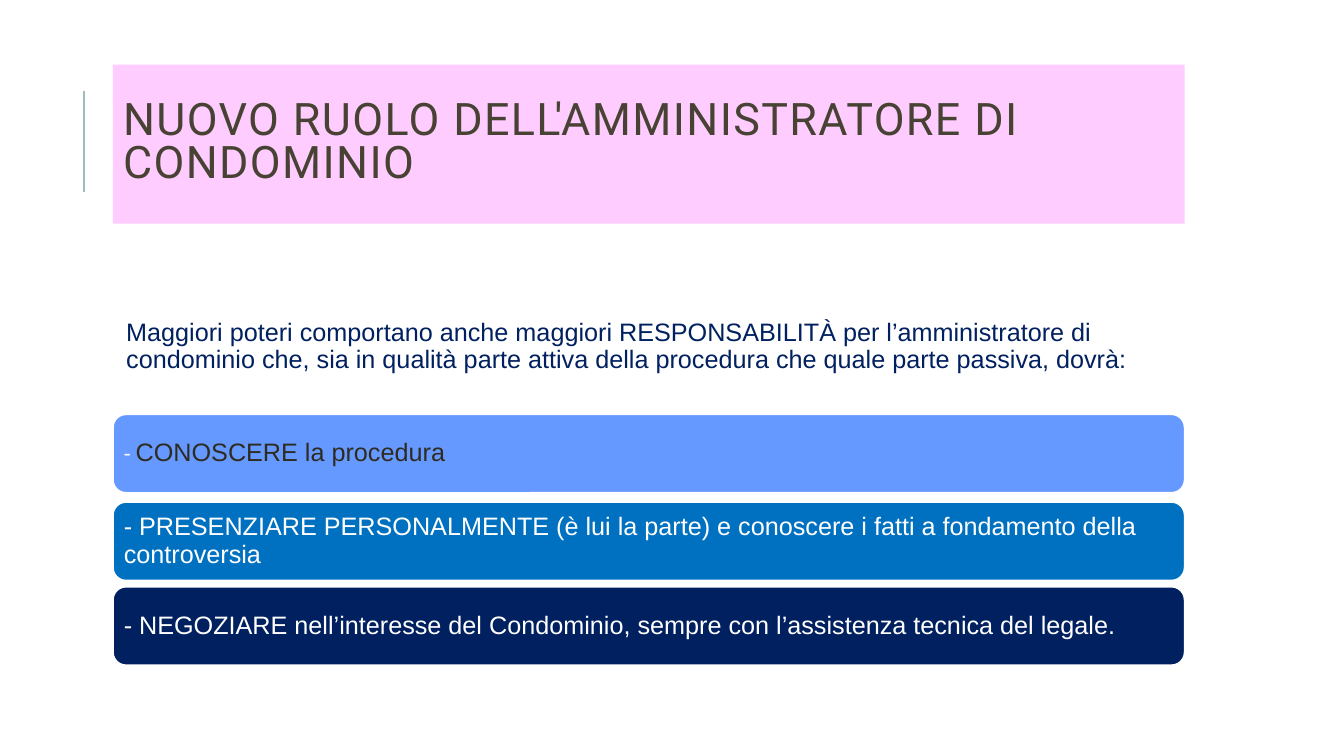
from dataclasses import dataclass

from pptx import Presentation
from pptx.dml.color import RGBColor
from pptx.enum.shapes import MSO_CONNECTOR, MSO_SHAPE
from pptx.enum.text import MSO_ANCHOR, MSO_AUTO_SIZE, PP_ALIGN
from pptx.oxml.ns import qn
from pptx.util import Inches, Pt

STRAIGHT = MSO_CONNECTOR.STRAIGHT
ROUNDED = MSO_SHAPE.ROUNDED_RECTANGLE
MIDDLE = MSO_ANCHOR.MIDDLE
LEFT = PP_ALIGN.LEFT
NO_FIT = MSO_AUTO_SIZE.NONE
TITLE_ONLY = 5


@dataclass(frozen=True)
class Theme:
    white: str = "FFFFFF"
    rule: str = "9CBEBD"
    title_fill: str = "FFCCFF"
    title_text: str = "474233"
    navy: str = "002060"
    blue: str = "0070C0"
    light_blue: str = "6699FF"
    dark: str = "2E2B21"
    title_font: str = "Roboto"
    body_font: str = "Arial"
    dash_font: str = "Calibri"
    title_size: int = 32
    body_size: int = 18
    dash_size: int = 16


THEME = Theme()
BOX_LEFT, BOX_WIDTH = 1.12, 10.63
INSET = 0.07


def rgb(value):
    return RGBColor.from_string(value)


def set_attrs(target, values):
    for name, value in values.items():
        setattr(target, name, value)


def fill_solid(shape, color):
    shape.fill.solid()
    shape.fill.fore_color.rgb = rgb(color)


def add_run(p, text, color, font=THEME.body_font, size=THEME.body_size):
    r = p.add_run()
    r.text = text
    set_attrs(r.font, {"name": font, "size": Pt(size), "bold": False})
    r.font.color.rgb = rgb(color)
    return r


def set_up_text(tf, spacing):
    set_attrs(tf, {"word_wrap": True, "auto_size": NO_FIT, "vertical_anchor": MIDDLE})
    p = tf.paragraphs[0]
    set_attrs(p, {"alignment": LEFT, "line_spacing": spacing})
    return p


def add_rule(s, x, top, bottom):
    line = s.shapes.add_connector(STRAIGHT, Inches(x), Inches(bottom), Inches(x), Inches(top))
    line.line.color.rgb = rgb(THEME.rule)
    line.line.width = Pt(1.5)
    sp_pr = line._element.spPr
    sp_pr.append(sp_pr.makeelement(qn("a:effectLst"), {}))


def add_title(s, text):
    title = s.shapes.title
    set_attrs(title, {"left": Inches(BOX_LEFT), "top": Inches(0.64),
                      "width": Inches(BOX_WIDTH), "height": Inches(1.58)})
    fill_solid(title, THEME.title_fill)
    p = set_up_text(title.text_frame, 0.8)
    r = add_run(p, text, THEME.title_text, THEME.title_font, THEME.title_size)
    r.font._element.set("spc", "100")  # letter spacing of 1 pt


def add_card(s, top, height, fill, runs):
    card = s.shapes.add_shape(ROUNDED, Inches(BOX_LEFT), Inches(top),
                              Inches(BOX_WIDTH), Inches(height))
    card.shadow.inherit = False
    fill_solid(card, fill)
    card.line.color.rgb = rgb(THEME.white)
    card.line.width = Pt(1.25)
    tf = card.text_frame
    set_attrs(tf, {f"margin_{side}": Inches(INSET)
                   for side in ("left", "top", "right", "bottom")})
    p = set_up_text(tf, 0.9)
    for run in runs:
        add_run(p, *run)


def main():
    prs = Presentation()
    prs.slide_width, prs.slide_height = Inches(13.33), Inches(7.5)
    s = prs.slides.add_slide(prs.slide_layouts[TITLE_ONLY])

    # Heading
    add_rule(s, 0.83, 0.9, 1.9)
    add_title(s, "NUOVO RUOLO DELL'AMMINISTRATORE DI CONDOMINIO")

    # Introduction and the three duties
    cards = [
        (2.8, 1.28, THEME.white, [(
            "Maggiori poteri comportano anche maggiori RESPONSABILITÀ per "
            "l’amministratore di condominio che, sia in qualità parte attiva "
            "della procedura che quale parte passiva, dovrà:", THEME.navy)]),
        (4.11, 0.78, THEME.light_blue, [
            ("- ", THEME.white, THEME.dash_font, THEME.dash_size),
            ("CONOSCERE la procedura", THEME.dark)]),
        (4.98, 0.78, THEME.blue, [(
            "- PRESENZIARE PERSONALMENTE (è lui la parte) e conoscere i fatti "
            "a fondamento della controversia", THEME.white)]),
        (5.82, 0.78, THEME.navy, [(
            "- NEGOZIARE nell’interesse del Condominio, sempre con "
            "l’assistenza tecnica del legale.", THEME.white)]),
    ]
    for card in cards:
        add_card(s, *card)

    prs.save("out.pptx")


if __name__ == "__main__":
    main()
